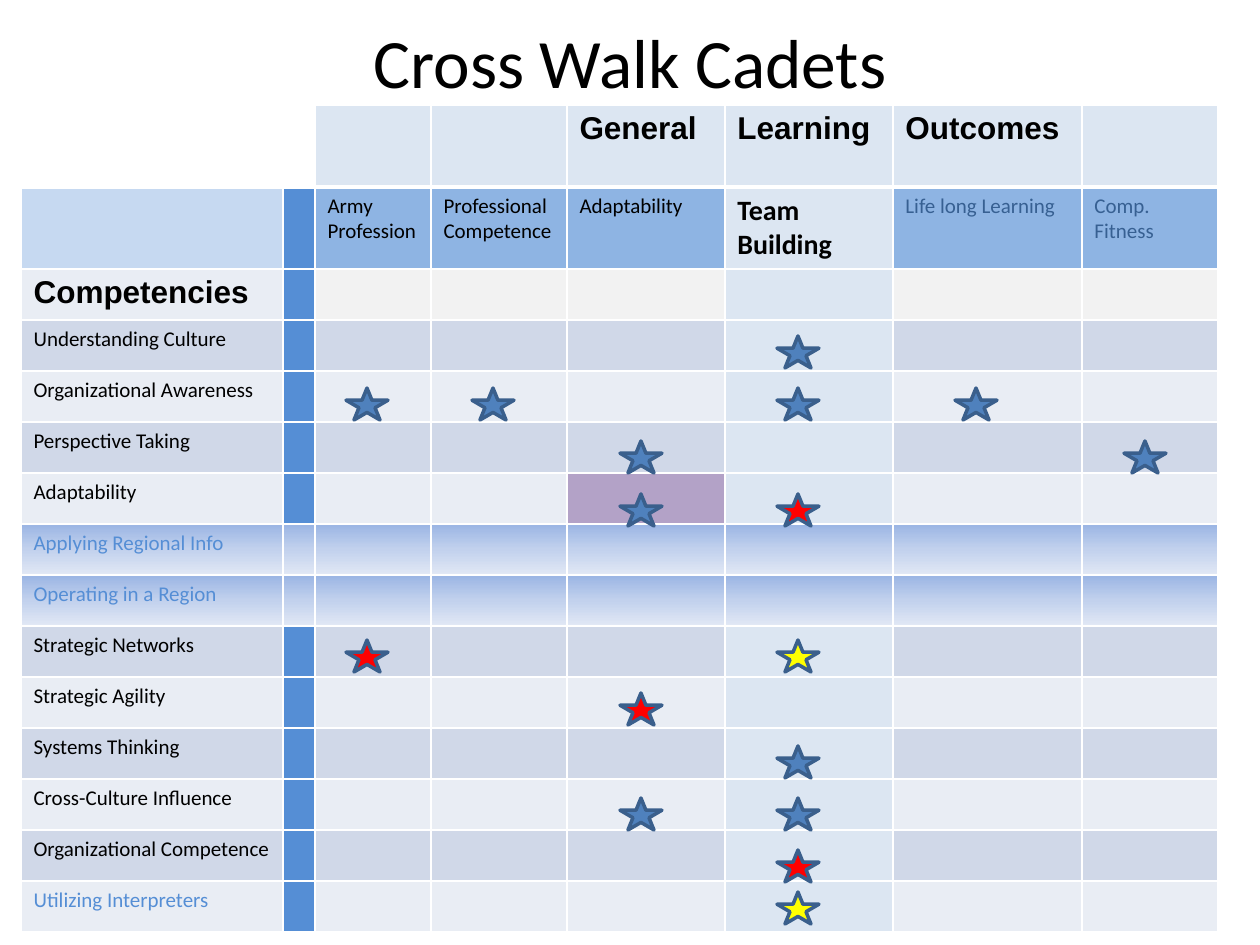
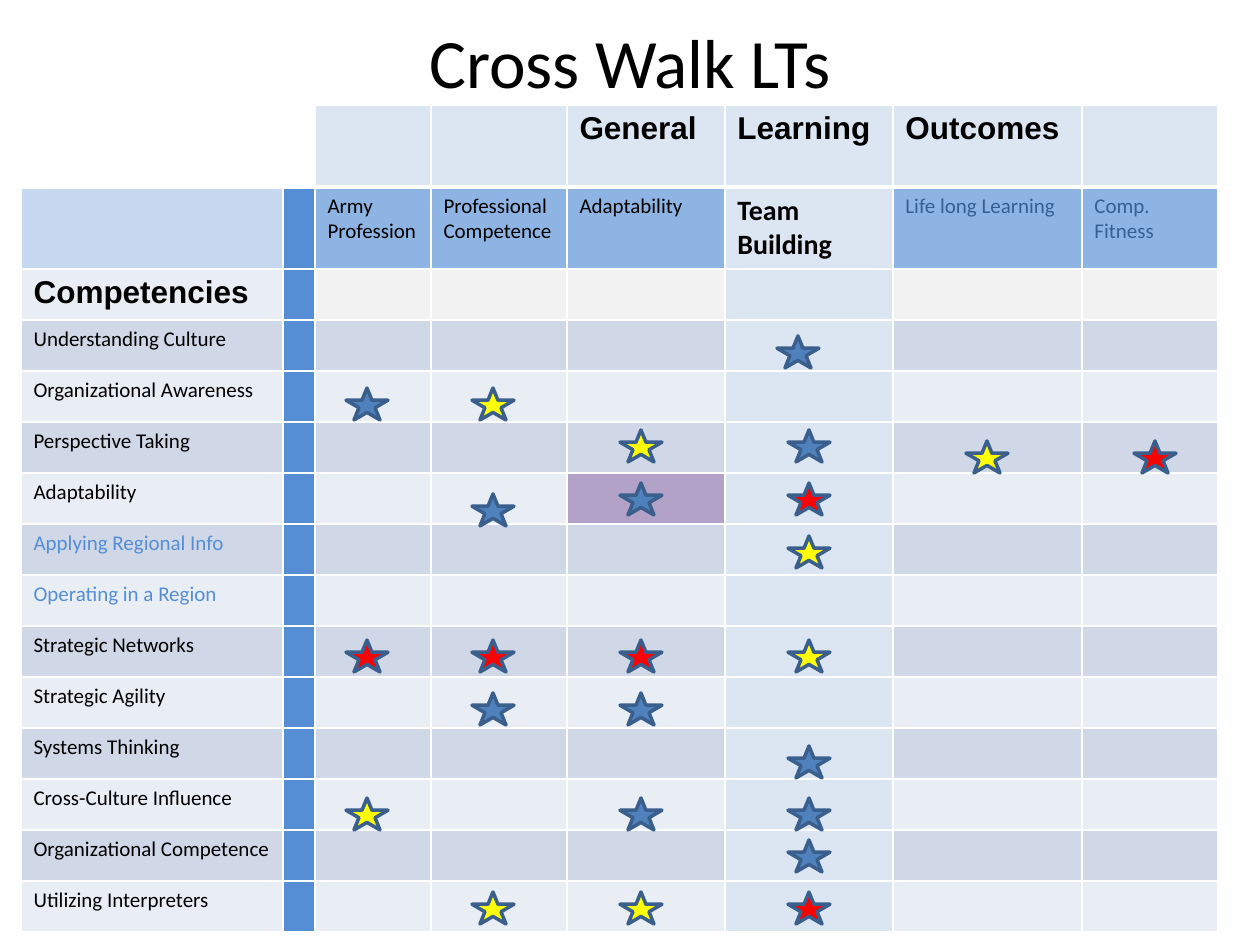
"""Build two cross-walk slides that match competencies with learning outcomes."""
from dataclasses import dataclass

from pptx import Presentation
from pptx.dml.color import RGBColor
from pptx.enum.shapes import MSO_SHAPE
from pptx.enum.text import MSO_ANCHOR, PP_ALIGN
from pptx.oxml import parse_xml
from pptx.oxml.ns import nsdecls
from pptx.util import Pt

PX = 914400 / 126


@dataclass(frozen=True)
class Theme:
    body: str = "Calibri"
    head: str = "Arial"
    title: float = 39.6
    large: int = 18
    mid: int = 16
    small: int = 12
    black: str = "000000"
    white: str = "FFFFFF"
    pale: str = "DCE6F2"
    sky: str = "C6D9F1"
    blue: str = "558ED5"
    soft: str = "8EB4E3"
    navy: str = "376092"
    grey: str = "F2F2F2"
    odd: str = "D0D8E8"
    even: str = "E9EDF4"
    plum: str = "B3A2C7"
    edge: str = "3A5F8C"
    haze: tuple = ((0, "9AB5E4"), (50, "C2D1ED"), (100, "E1E8F5"))


T = Theme()
STAR = {"B": "4F81BD", "R": "FF0000", "Y": "FFFF00"}
COLS = [262, 32, 116, 136, 158, 168, 189, 136]
ROWS = [82, 82] + [51] * 13
HEADS = ["", "", "", "", "General", "Learning", "Outcomes", ""]
GOALS = ["", "", "Army Profession", "Professional Competence", "Adaptability",
         "Team Building", "Life long Learning", "Comp.\nFitness"]
SKILLS = ["Competencies", "Understanding Culture", "Organizational Awareness",
          "Perspective Taking", "Adaptability", "Applying Regional Info",
          "Operating in a Region", "Strategic Networks", "Strategic Agility",
          "Systems Thinking", "Cross-Culture Influence",
          "Organizational Competence", "Utilizing Interpreters"]
GRID = [HEADS, GOALS] + [[skill] + [""] * 7 for skill in SKILLS]
REGION = (7, 8)
TEAM = 5

SLIDES = [
    {"title": "Cross Walk Cadets", "haze": REGION, "faded": (7, 8, 14),
     "stars": {346: {388: "B", 640: "R"},
               472: {388: "B"},
               620: {441: "B", 494: "B", 693: "R", 798: "B"},
               777: {336: "B", 388: "B", 494: "R", 640: "Y", 746: "B",
                     798: "B", 850: "R", 892: "Y"},
               955: {388: "B"},
               1124: {441: "B"}}},
    {"title": "Cross Walk LTs", "haze": (), "faded": REGION,
     "stars": {346: {388: "B", 640: "R", 798: "Y"},
               472: {388: "Y", 494: "B", 640: "R", 693: "B", 892: "Y"},
               620: {430: "Y", 483: "B", 640: "R", 693: "B", 798: "B", 892: "Y"},
               777: {336: "B"},
               788: {430: "B", 483: "R", 536: "Y", 640: "Y", 746: "B",
                     798: "B", 840: "B", 892: "R"},
               966: {441: "Y"},
               1134: {441: "R"}}},
]


def px(*sizes):
    return [round(size * PX) for size in sizes]


def style(frame, font, size, color, bold=False):
    for para in frame.paragraphs:
        for run in para.runs:
            run.font.name = font
            run.font.size = Pt(size)
            run.font.bold = bold
            run.font.color.rgb = RGBColor.from_string(color)


deck = Presentation()
deck.slide_width, deck.slide_height = px(1260, 945)

for plan in SLIDES:
    slide = deck.slides.add_slide(deck.slide_layouts[6])
    frame = slide.shapes.add_textbox(*px(63, 38, 1134, 46)).text_frame
    frame.word_wrap = True
    frame.vertical_anchor = MSO_ANCHOR.MIDDLE
    frame.text = plan["title"]
    frame.paragraphs[0].alignment = PP_ALIGN.CENTER
    style(frame, T.body, T.title, T.black)

    box = px(21, 105, sum(COLS), sum(ROWS))
    table = slide.shapes.add_table(len(ROWS), len(COLS), *box).table
    table.first_row = table.horz_banding = False
    for col, width in zip(table.columns, px(*COLS)):
        col.width = width
    for row, height in zip(table.rows, px(*ROWS)):
        row.height = height

    for r, line in enumerate(GRID):
        for c, text in enumerate(line):
            cell = table.cell(r, c)
            props = cell._tc.get_or_add_tcPr()
            for side in "LRTB":
                thick = (r, side) in ((0, "B"), (1, "T"))
                props.append(parse_xml(
                    f'<a:ln{side} {nsdecls("a")} w="{Pt(3 if thick else 1)}"><a:solidFill>'
                    f'<a:srgbClr val="{T.white}"/></a:solidFill></a:ln{side}>'))

            if r in plan["haze"]:
                stops = "".join(f'<a:gs pos="{at * 1000}"><a:srgbClr val="{tint}"/></a:gs>'
                                for at, tint in T.haze)
                props.append(parse_xml(
                    f'<a:gradFill {nsdecls("a")} rotWithShape="1"><a:gsLst>{stops}</a:gsLst>'
                    '<a:lin ang="5400000" scaled="0"/></a:gradFill>'))
            else:
                if r == 0:
                    fill = T.white if c < 2 else T.pale
                elif c == 1:
                    fill = T.blue
                elif c == TEAM:
                    fill = T.pale
                elif r == 1:
                    fill = T.soft if c else T.sky
                elif r == 2 and c:
                    fill = T.grey
                elif (r, c) == (6, 4):
                    fill = T.plum
                else:
                    fill = T.odd if r % 2 else T.even
                cell.fill.solid()
                cell.fill.fore_color.rgb = RGBColor.from_string(fill)

            if not text:
                continue
            cell.text_frame.text = text
            if r in (0, 2):
                style(cell.text_frame, T.head, T.large, T.black, True)
            elif (r, c) == (1, TEAM):
                style(cell.text_frame, T.body, T.mid, T.black, True)
            else:
                ink = T.blue if r in plan["faded"] else T.black
                if r == 1 and c > TEAM:
                    ink = T.navy
                style(cell.text_frame, T.body, T.small, ink)

    for x, marks in plan["stars"].items():
        for y, kind in marks.items():
            star = slide.shapes.add_shape(MSO_SHAPE.STAR_5_POINT, *px(x, y, 42, 32))
            star.shadow.inherit = False
            star.fill.solid()
            star.fill.fore_color.rgb = RGBColor.from_string(STAR[kind])
            star.line.color.rgb = RGBColor.from_string(T.edge)
            star.line.width = Pt(2)

deck.save("out.pptx")
